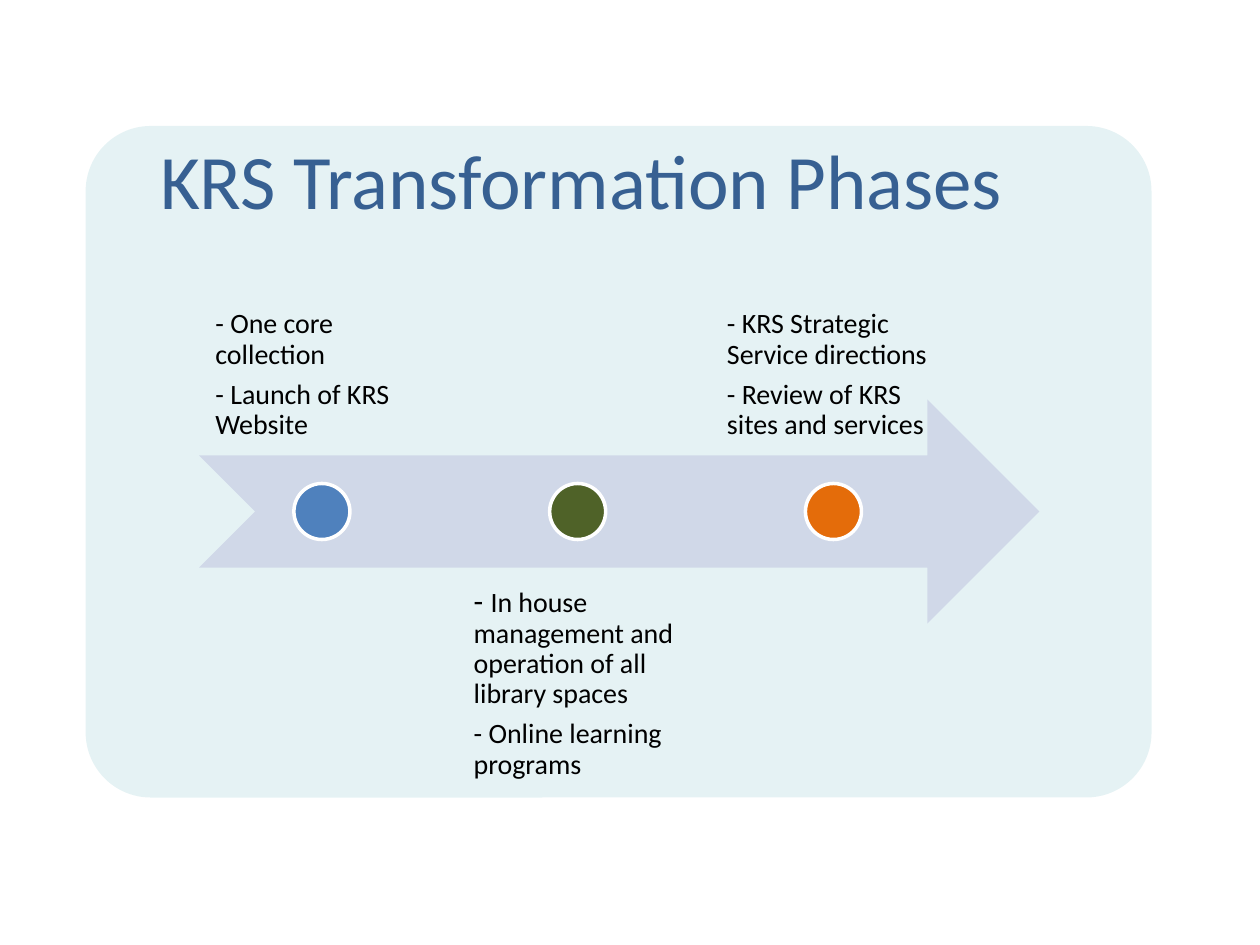
from lxml.etree import SubElement
from pptx import Presentation
from pptx.dml.color import RGBColor
from pptx.enum.shapes import MSO_SHAPE
from pptx.enum.text import MSO_ANCHOR, PP_ALIGN
from pptx.oxml.ns import qn
from pptx.util import Inches, Pt

COLORS = {
    "panel": "008996",
    "arrow": "D0D8E8",
    "title": "376092",
    "text": "000000",
    "ring": "FFFFFF",
}
FONT = "Calibri"
PHASES = [
    ("4F81BD", 16, ["One core collection", "Launch of KRS Website"]),
    ("4F6228", 18, ["In house management and operation of all library spaces",
                    "Online learning programs"]),
    ("E46C0A", 16, ["KRS Strategic Service directions",
                    "Review of KRS sites and services"]),
]


def add_filled_shape(page, kind, box, color):
    """Add a flat preset shape without outline in the given box."""
    shape = page.shapes.add_shape(kind, *map(Inches, box))
    shape.shadow.inherit = False
    shape.fill.solid()
    shape.fill.fore_color.rgb = RGBColor.from_string(color)
    shape.line.fill.background()
    return shape


def style_font(font, size, color):
    """Set the typeface, size and colour of a font."""
    font.name = FONT
    font.size = Pt(size)
    font.color.rgb = RGBColor.from_string(color)


def add_panel(page, box):
    """Draw the rounded, nearly transparent background panel."""
    panel = add_filled_shape(page, MSO_SHAPE.ROUNDED_RECTANGLE, box, COLORS["panel"])
    panel.adjustments[0] = 0.097
    color = panel.fill._xPr.find(qn("a:solidFill"))[0]
    SubElement(color, qn("a:alpha"), val="10000")


def add_phase_text(page, box, items, anchor, inset, first_dash_size):
    """Write the dashed items of one phase."""
    frame = page.shapes.add_textbox(*map(Inches, box)).text_frame
    frame.word_wrap = True
    frame.vertical_anchor = anchor
    frame.margin_left = frame.margin_right = Inches(inset)
    frame.margin_top = frame.margin_bottom = Inches(inset)
    for index, item in enumerate(items):
        para = frame.paragraphs[0] if index == 0 else frame.add_paragraph()
        para.line_spacing = 0.9
        para.space_after = Pt(5.6)
        style_font(para.font, 16, COLORS["text"])
        dash = para.add_run()
        dash.text = "- "
        if index == 0:
            dash.font.size = Pt(first_dash_size)
        para.add_run().text = item


def add_timeline(page, box):
    """Draw the arrow with its phase dots and texts alternating above and below."""
    left, top, width, height = box
    add_filled_shape(page, MSO_SHAPE.NOTCHED_RIGHT_ARROW, box, COLORS["arrow"])
    text_width, step, dot_size = 1.93, 2.03, height / 4
    for index, (color, dash_size, items) in enumerate(PHASES):
        text_left = left + 0.01 + index * step
        above = index % 2 == 0
        text_top = top - height * 0.75 if above else top + height * 0.75
        anchor = MSO_ANCHOR.BOTTOM if above else MSO_ANCHOR.TOP
        add_phase_text(page, (text_left, text_top, text_width, height), items,
                       anchor, 0.12 if above else 0.14, dash_size)
        dot_left = text_left + (text_width - dot_size) / 2
        dot_top = top + (height - dot_size) / 2
        dot = add_filled_shape(page, MSO_SHAPE.OVAL,
                               (dot_left, dot_top, dot_size, dot_size), color)
        dot.line.color.rgb = RGBColor.from_string(COLORS["ring"])
        dot.line.width = Pt(2)


def place_title(page, box):
    """Format the title placeholder and bring it in front of the panel."""
    title = page.shapes.title
    title.left, title.top, title.width, title.height = map(Inches, box)
    frame = title.text_frame
    frame.text = "KRS Transformation Phases"
    frame.vertical_anchor = MSO_ANCHOR.TOP
    para = frame.paragraphs[0]
    para.alignment = PP_ALIGN.LEFT
    style_font(para.font, 44, COLORS["title"])
    page.shapes._spTree.append(title._element)


def main():
    """Build the slide and save the deck."""
    deck = Presentation()
    deck.slide_width, deck.slide_height = Inches(10), Inches(7.5)
    page = deck.slides.add_slide(deck.slide_layouts[5])
    add_panel(page, (0.68, 1, 8.46, 5.33))
    add_timeline(page, (1.58, 3.17, 6.67, 1.78))
    place_title(page, (1.17, 1, 7.5, 0.84))
    deck.save("out.pptx")


if __name__ == "__main__":
    main()
